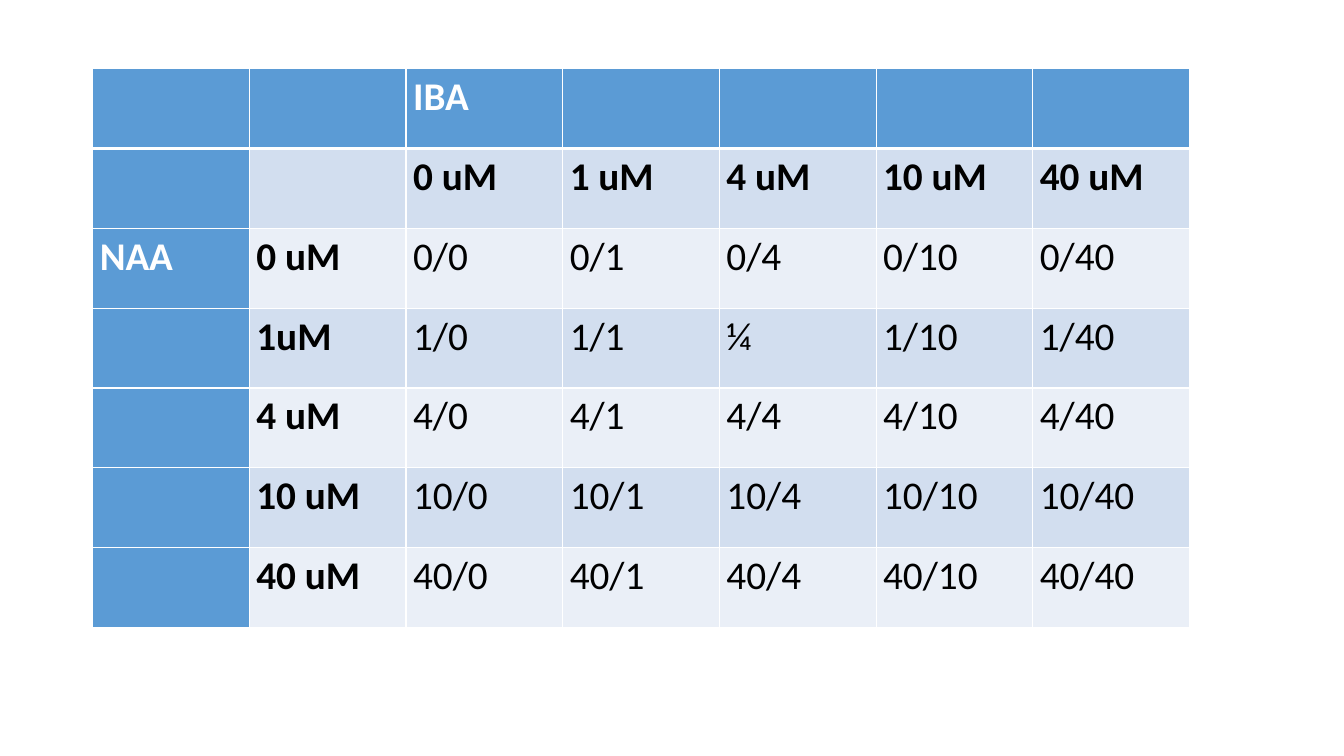
"""Build a slide tabulating NAA/IBA hormone dose combinations."""
from dataclasses import dataclass

from lxml import etree
from pptx import Presentation
from pptx import util as u
from pptx.dml.color import RGBColor
from pptx.enum import text
from pptx.oxml import ns

SLIDE_WIDTH = u.Inches(13.33)
SLIDE_HEIGHT = u.Inches(7.5)
GRID_LEFT, GRID_TOP = 0.069, 0.0911
GRID_WIDTH, GRID_HEIGHT = 0.8162, 0.7388

BLUE = RGBColor(0x5B, 0x9B, 0xD5)
BAND_DARK = RGBColor(0xD2, 0xDE, 0xEF)
BAND_LIGHT = RGBColor(0xEA, 0xEF, 0xF7)
WHITE = RGBColor(0xFF, 0xFF, 0xFF)
BLACK = RGBColor(0, 0, 0)

DOSES = (0, 1, 4, 10, 40)
NAA_LABELS = ("0 uM", "1uM", "4 uM", "10 uM", "40 uM")
IBA_LABELS = tuple(f"{dose} uM" for dose in DOSES)
SPECIAL_MIXES = {(1, 4): "¼"}


@dataclass(frozen=True)
class DoseCell:
    """Wording and look of one table cell."""
    wording: str
    fill: RGBColor
    ink: RGBColor
    bold: bool
    top_rule: int
    bottom_rule: int


def dose_rows() -> list[list[str]]:
    """Return the wording of the whole table, row by row."""
    rows = [["", "", "IBA", "", "", "", ""], ["", "", *IBA_LABELS]]
    for naa, label in zip(DOSES, NAA_LABELS):
        mixes = [SPECIAL_MIXES.get((naa, iba), f"{naa}/{iba}") for iba in DOSES]
        rows.append(["NAA" if naa == 0 else "", label, *mixes])
    return rows


def describe(wording: str, row: int, column: int) -> DoseCell:
    """Derive a cell's look from its place in the table."""
    heading = row == 0 or column == 0
    band = BAND_DARK if row % 2 else BAND_LIGHT
    return DoseCell(
        wording,
        fill=BLUE if heading else band,
        ink=WHITE if heading else BLACK,
        bold=row < 2 or column < 2,
        top_rule=3 if row == 1 else 1,
        bottom_rule=3 if row == 0 else 1,
    )


def draw_borders(cell, dose: DoseCell) -> None:
    """Give a cell white rules on all four sides."""
    properties = cell._tc.get_or_add_tcPr()
    widths = {"lnL": 1, "lnR": 1, "lnT": dose.top_rule, "lnB": dose.bottom_rule}
    for place, (side, width) in enumerate(widths.items()):
        rule = etree.Element(ns.qn(f"a:{side}"), w=str(u.Pt(width)))
        paint = etree.SubElement(rule, ns.qn("a:solidFill"))
        etree.SubElement(paint, ns.qn("a:srgbClr"), val=str(WHITE))
        properties.insert(place, rule)


def draw_cell(cell, dose: DoseCell) -> None:
    """Fill, rule and letter one cell."""
    cell.fill.solid()
    cell.fill.fore_color.rgb = dose.fill
    draw_borders(cell, dose)
    if not dose.wording:
        return
    cell.margin_left = cell.margin_right = u.Inches(0.07)
    cell.margin_top = cell.margin_bottom = 0
    cell.text_frame.text = dose.wording
    paragraph = cell.text_frame.paragraphs[0]
    paragraph.alignment = text.PP_ALIGN.JUSTIFY
    paragraph.line_spacing = 1.1
    font = paragraph.runs[0].font
    font.name = "Calibri"
    font.size = u.Pt(28)
    font.bold = dose.bold
    font.color.rgb = dose.ink


def main() -> None:
    """Create and save the presentation."""
    deck = Presentation()
    deck.slide_width, deck.slide_height = SLIDE_WIDTH, SLIDE_HEIGHT
    slide = deck.slides.add_slide(deck.slide_layouts[6])
    rows = dose_rows()
    dose_table = slide.shapes.add_table(
        len(rows), len(rows[0]),
        int(SLIDE_WIDTH * GRID_LEFT), int(SLIDE_HEIGHT * GRID_TOP),
        int(SLIDE_WIDTH * GRID_WIDTH), int(SLIDE_HEIGHT * GRID_HEIGHT),
    ).table
    for row, wordings in enumerate(rows):
        for column, wording in enumerate(wordings):
            draw_cell(dose_table.cell(row, column), describe(wording, row, column))
    deck.save("out.pptx")


if __name__ == "__main__":
    main()
